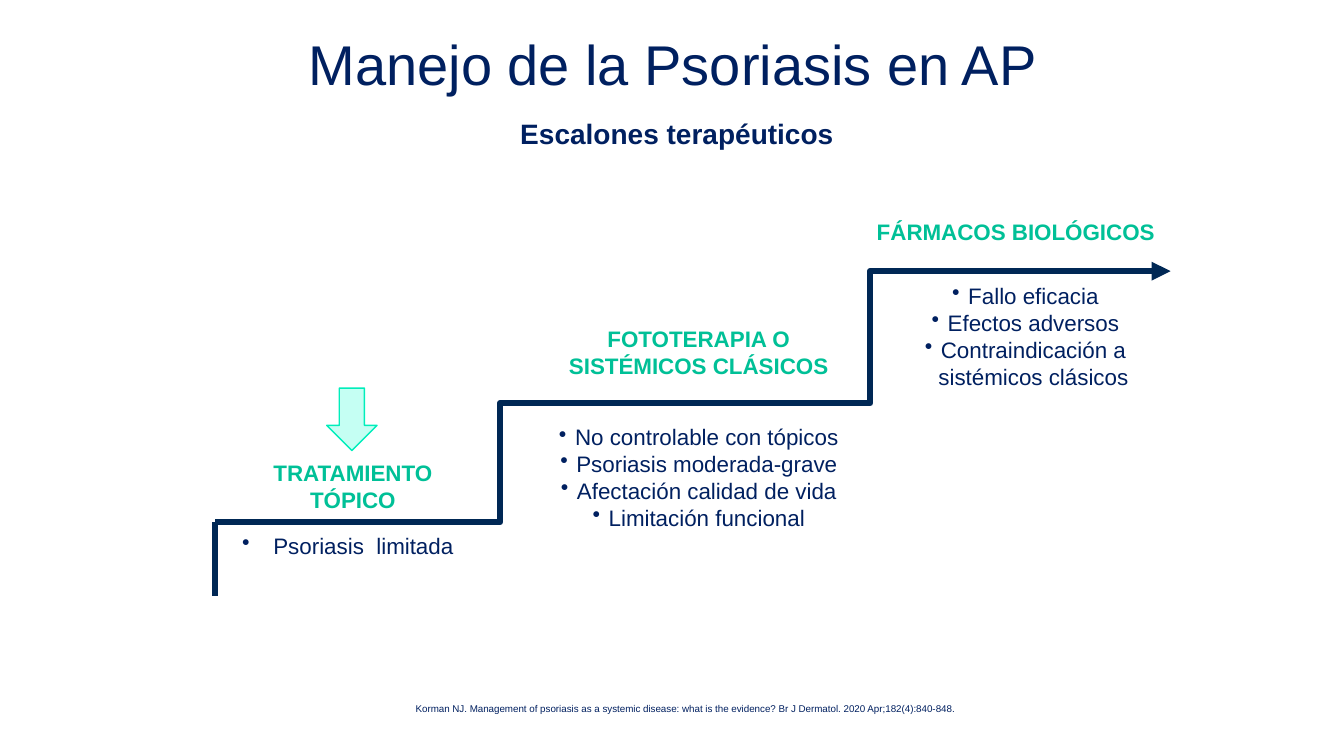
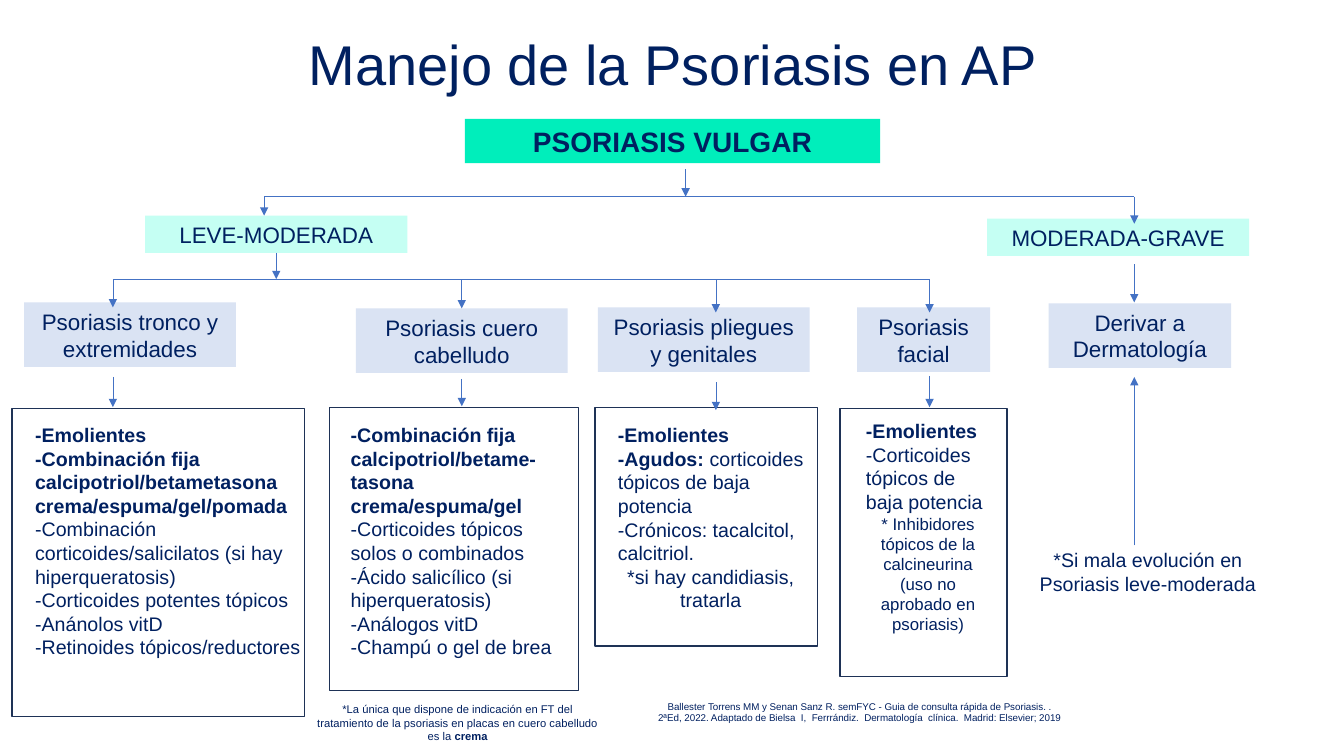
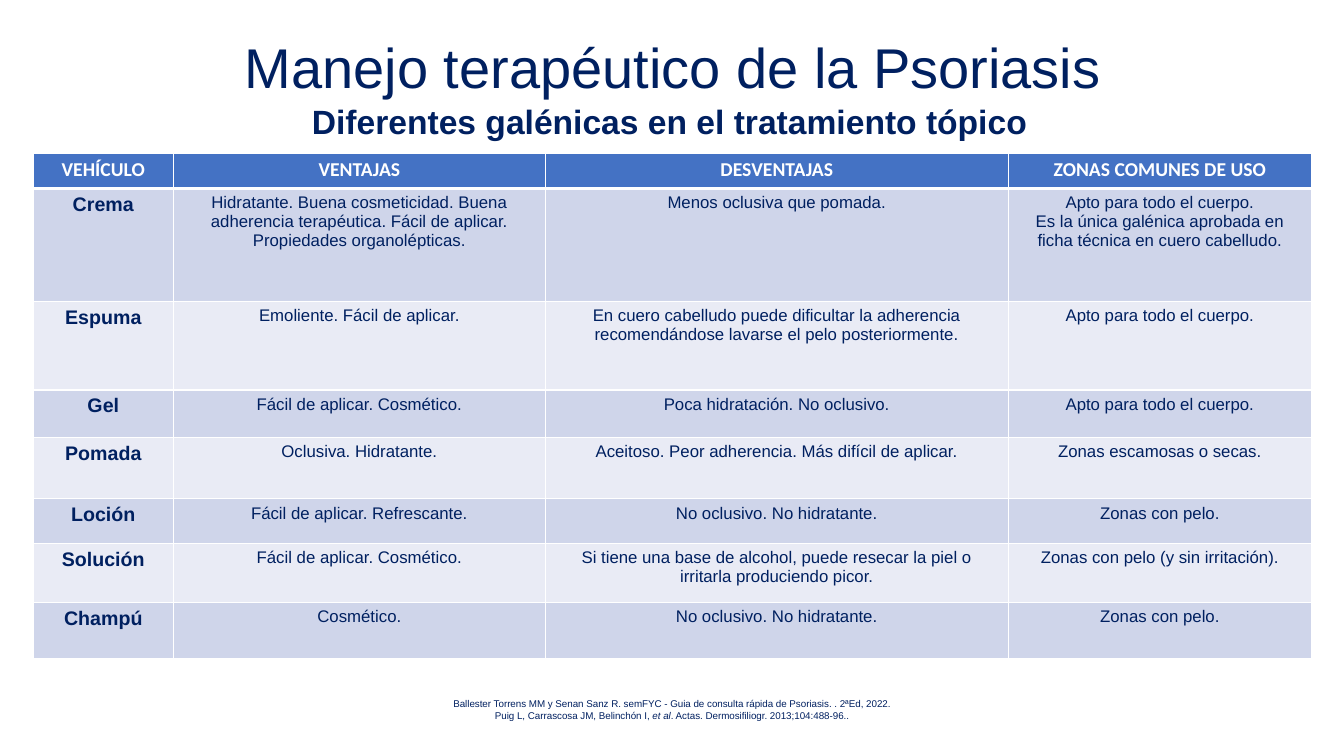
import lxml.etree
import pptx
import pptx.dml.color
import pptx.enum.shapes
import pptx.enum.text
import pptx.oxml.ns
import pptx.util

Inches = pptx.util.Inches
Pt = pptx.util.Pt
RGBColor = pptx.dml.color.RGBColor
SHAPE = pptx.enum.shapes.MSO_SHAPE
CONNECTOR = pptx.enum.shapes.MSO_CONNECTOR
ALIGN = pptx.enum.text.PP_ALIGN
ANCHOR = pptx.enum.text.MSO_ANCHOR
qn = pptx.oxml.ns.qn

NAVY = RGBColor(0x00, 0x20, 0x60)
STEP_BLUE = RGBColor(0x00, 0x28, 0x55)
PANEL_BLUE = RGBColor(0x1E, 0x32, 0x56)
BLUE = RGBColor(0x44, 0x72, 0xC4)
PALE_BLUE = RGBColor(0xDA, 0xE3, 0xF3)
GREEN = RGBColor(0x00, 0xC0, 0x97)
MINT = RGBColor(0x00, 0xEE, 0xBB)
PALE_MINT = RGBColor(0xC5, 0xFF, 0xF3)
WHITE = RGBColor(0xFF, 0xFF, 0xFF)
BANDS = (RGBColor(0xE9, 0xEB, 0xF5), RGBColor(0xCF, 0xD5, 0xEA))
FONT = "Arial"
PADDING = (0.1, 0.05)
NO_PADDING = (0, 0)


class Deck:
    def __init__(self):
        self.prs = pptx.Presentation()
        self.prs.slide_width = Inches(13.33)
        self.prs.slide_height = Inches(7.5)
        self.s = None

    def new_slide(self, title, top=0.37):
        self.s = self.prs.slides.add_slide(self.prs.slide_layouts[6])
        self.text((0.71, top, 11.92, 0.62), [title], 40, padding=NO_PADDING, spacing=0.9)

    def fill_frame(self, tf, paragraphs, size, color=NAVY, bold=False, align=ALIGN.CENTER,
                   font=FONT, spacing=None):
        """Each paragraph is a string or a list of (text, "b", "i" or "") runs."""
        for i, runs in enumerate(paragraphs):
            p = tf.paragraphs[0] if i == 0 else tf.add_paragraph()
            p.alignment = align
            if spacing:
                p.line_spacing = spacing
            for text, style in [(runs, "")] if isinstance(runs, str) else runs:
                r = p.add_run()
                r.text = text
                r.font.name = font
                r.font.size = Pt(size)
                r.font.bold = bold or style == "b"
                r.font.italic = style == "i"
                r.font.color.rgb = color

    def text(self, box, paragraphs, size, padding=PADDING, anchor=ANCHOR.TOP, **style):
        tf = self.s.shapes.add_textbox(*map(Inches, box)).text_frame
        tf.word_wrap = True
        tf.vertical_anchor = anchor
        tf.margin_left = tf.margin_right = Inches(padding[0])
        tf.margin_top = tf.margin_bottom = Inches(padding[1])
        self.fill_frame(tf, paragraphs, size, **style)
        return tf

    def bullets(self, box, items, indent=0.16):
        tf = self.text(box, items, 16, padding=NO_PADDING)
        for p in tf.paragraphs:
            pPr = p._p.get_or_add_pPr()
            pPr.set("marL", str(Inches(indent)))
            pPr.set("indent", str(-Inches(indent)))
            lxml.etree.SubElement(pPr, qn("a:buChar")).set("char", "•")

    def subtitle(self, box, text, size, align):
        self.text(box, [text], size, padding=NO_PADDING, bold=True, align=align, spacing=0.89)

    def citation(self, box, paragraphs):
        self.text(box, paragraphs, 7, padding=NO_PADDING, anchor=ANCHOR.MIDDLE)

    def shape(self, box, fill=None, line=None, kind=SHAPE.RECTANGLE):
        sp = self.s.shapes.add_shape(kind, *map(Inches, box))
        sp.shadow.inherit = False
        if fill is None:
            sp.fill.background()
        else:
            sp.fill.solid()
            sp.fill.fore_color.rgb = fill
        if line is None:
            sp.line.fill.background()
        else:
            sp.line.color.rgb = line
            sp.line.width = Pt(1)
        return sp

    def label(self, box, text, fill, size=16, bold=False):
        sp = self.shape(box, fill)
        sp.text_frame.vertical_anchor = ANCHOR.MIDDLE
        self.fill_frame(sp.text_frame, [text], size, bold=bold)
        return sp

    def line(self, start, end, color=BLUE, width=0.5, arrow=True, kind=CONNECTOR.STRAIGHT):
        c = self.s.shapes.add_connector(kind, *map(Inches, (*start, *end)))
        c.line.color.rgb = color
        c.line.width = Pt(width)
        spPr = c._element.spPr
        if arrow:
            lxml.etree.SubElement(spPr.find(qn("a:ln")), qn("a:tailEnd")).set("type", "triangle")
        lxml.etree.SubElement(spPr, qn("a:effectLst"))
        return c

    def cell_borders(self, cell, bottom):
        tcPr = cell._tc.get_or_add_tcPr()
        for side, width in (("L", 1), ("R", 1), ("T", 1), ("B", bottom)):
            ln = lxml.etree.SubElement(tcPr, qn("a:ln" + side))
            ln.set("w", str(Pt(width)))
            solid = lxml.etree.SubElement(ln, qn("a:solidFill"))
            lxml.etree.SubElement(solid, qn("a:srgbClr")).set("val", str(WHITE))

    def table(self, box, widths, heights, rows):
        table = self.s.shapes.add_table(len(rows), len(widths), *map(Inches, box)).table
        for column, width in zip(table.columns, widths):
            column.width = Inches(width)
        for i, (height, row) in enumerate(zip(heights, rows)):
            table.rows[i].height = Inches(height)
            for j, text in enumerate(row):
                cell = table.cell(i, j)
                self.cell_borders(cell, bottom=3 if i == 0 else 1)
                cell.fill.solid()
                cell.fill.fore_color.rgb = BLUE if i == 0 else BANDS[i % 2]
                if i == 0:
                    style = dict(size=14, color=WHITE, bold=True, font="Calibri")
                elif j == 0:
                    style = dict(size=14, bold=True)
                else:
                    style = dict(size=12)
                self.fill_frame(cell.text_frame, text.split("\n"), **style)


def steps_slide(d):
    d.new_slide("Manejo de la Psoriasis en AP")
    d.subtitle((5.16, 1.2, 4.62, 0.81), "Escalones terapéuticos", 20, ALIGN.LEFT)
    stair = dict(color=STEP_BLUE, width=4.5)
    d.line((5.65, 4), (11.61, 2.69), kind=CONNECTOR.ELBOW, **stair)
    d.line((7.79, 4), (2.13, 5.18), kind=CONNECTOR.ELBOW, arrow=False, **stair)
    d.line((2.13, 5.18), (2.13, 5.91), arrow=False, **stair)

    d.bullets((2.27, 5.28, 2.36, 0.27), ["Psoriasis  limitada"], indent=0.31)
    d.bullets((5.39, 4.2, 3.08, 1.08), [
        "No controlable con tópicos", "Psoriasis moderada-grave",
        "Afectación calidad de vida", "Limitación funcional"])
    d.bullets((8.63, 2.8, 3.08, 1.08), [
        "Fallo eficacia", "Efectos adversos", "Contraindicación a sistémicos clásicos"])
    for box, heading in (
            ((2.27, 4.56, 2.46, 0.54), "TRATAMIENTO TÓPICO"),
            ((5.39, 3.23, 3.08, 0.54), "FOTOTERAPIA O SISTÉMICOS CLÁSICOS"),
            ((8.63, 2.16, 2.89, 0.27), "FÁRMACOS BIOLÓGICOS")):
        d.text(box, [heading], 16, padding=NO_PADDING, color=GREEN, bold=True)
    d.shape((3.24, 3.85, 0.5, 0.62), PALE_MINT, MINT, SHAPE.DOWN_ARROW)
    d.text((2.57, 6.92, 8.45, 0.22), [
        "Korman NJ. Management of psoriasis as a systemic disease: what is the evidence? "
        "Br J Dermatol. 2020 Apr;182(4):840-848."], 7)


def algorithm_slide(d):
    d.new_slide("Manejo de la Psoriasis en AP")
    d.label((4.61, 1.18, 4.12, 0.44), "PSORIASIS VULGAR", MINT, 20, bold=True)
    mild = d.label((1.44, 2.14, 2.6, 0.37), "LEVE-MODERADA", PALE_MINT)
    d.label((9.79, 2.17, 2.6, 0.37), "MODERADA-GRAVE", PALE_MINT)
    d.label((10.4, 3.01, 1.81, 0.64), "Derivar a Dermatología", PALE_BLUE)

    severity_y, site_y = 1.95, 2.77
    d.line((2.62, severity_y), (11.25, severity_y), arrow=False)
    d.line((6.8, 1.68), (6.8, severity_y))
    d.line((2.62, severity_y), (2.62, 2.14))
    d.line((11.25, severity_y), (11.25, 2.22))
    d.line((11.25, 2.62), (11.25, 3))
    d.line((11.25, 5.41), (11.25, 3.74))
    d.line((1.12, site_y), (9.22, site_y), arrow=False)
    d.line((2.74, 2.51), (2.74, site_y)).begin_connect(mild, 2)

    # site, label box, panel box, text box, arrow x, arrow ends, treatments
    sites = (
        ("Psoriasis tronco y extremidades", (0.24, 3, 2.1, 0.64), (0.12, 4.05, 2.9, 3.06),
         (0.25, 4.15, 2.84, 2.46), 1.12, (3.05, 3.74, 4.04),
         [[("-Emolientes", "b")],
          [("-Combinación fija calcipotriol/betametasona crema/espuma/gel/pomada", "b")],
          "-Combinación corticoides/salicilatos (si hay hiperqueratosis)",
          "-Corticoides potentes tópicos", "-Anánolos vitD",
          "-Retinoides tópicos/reductores"]),
        ("Psoriasis cuero cabelludo", (3.53, 3.06, 2.1, 0.64), (3.27, 4.04, 2.47, 2.81),
         (3.38, 4.15, 2.33, 2.46), 4.58, (3.06, 3.76, 4.03),
         [[("-Combinación fija calcipotriol/betame-tasona crema/espuma/gel", "b")],
          "-Corticoides tópicos solos o combinados", "-Ácido salicílico (si hiperqueratosis)",
          "-Análogos vitD", "-Champú o gel de brea"]),
        ("Psoriasis pliegues y genitales", (5.93, 3.05, 2.1, 0.64), (5.9, 4.04, 2.21, 2.37),
         (6.03, 4.15, 2.04, 1.99), 7.1, (3.1, 3.79, 4.07),
         [[("-Emolientes", "b")],
          [("-Agudos: ", "b"), ("corticoides tópicos de baja potencia", "")],
          "-Crónicos: tacalcitol, calcitriol.", "*si hay candidiasis, tratarla"]),
        ("Psoriasis facial", (8.5, 3.05, 1.32, 0.64), (8.33, 4.05, 1.66, 2.66),
         (8.49, 4.11, 1.43, 2.26), 9.22, (3.1, 3.73, 4.04),
         [[("-Emolientes", "b")], "-Corticoides tópicos de baja potencia",
          "* Inhibidores tópicos de la calcineurina (uso no aprobado en psoriasis)"]),
    )
    for site, label_box, panel_box, text_box, x, (label_y, start_y, panel_y), treatments in sites:
        label = d.label(label_box, site, PALE_BLUE)
        d.shape(panel_box, line=PANEL_BLUE)
        tf = d.text(text_box, treatments, 14, align=ALIGN.LEFT)
        remark = tf.paragraphs[-1]
        if remark.text.startswith("*"):
            remark.alignment = ALIGN.CENTER
        if site == "Psoriasis facial":
            remark.runs[0].font.size = Pt(12)
        branch = d.line((x, site_y), (x, label_y))
        if site == "Psoriasis cuero cabelludo":
            branch.end_connect(label, 0)
        d.line((x, start_y), (x, panel_y))

    d.text((10.19, 5.39, 2.39, 0.57), ["*Si mala evolución en Psoriasis leve-moderada"], 14)
    d.text((3.01, 6.92, 3.06, 0.5), [[
        ("*La única que dispone de indicación en FT del tratamiento de la psoriasis "
         "en placas en cuero cabelludo es la ", ""), ("crema", "b")]], 8)
    d.citation((6.51, 6.88, 4.03, 0.37), [
        "Ballester Torrens MM y Senan Sanz R. semFYC - Guia de consulta rápida de Psoriasis. . "
        "2ªEd, 2022. Adaptado de Bielsa  I,  Ferrrándiz.  Dermatología  clínica.  "
        "Madrid: Elsevier; 2019"])


def vehicles_slide(d):
    d.new_slide("Manejo terapéutico de la Psoriasis", top=0.4)
    d.subtitle((1.84, 1.05, 9.6, 0.81), "Diferentes galénicas en el tratamiento tópico", 24,
               ALIGN.CENTER)
    d.table(
        (0.33, 1.52, 12.67, 5.03), (1.39, 3.69, 4.59, 3.01),
        (0.35, 1.12, 0.88, 0.47, 0.61, 0.44, 0.59, 0.55),
        (("VEHÍCULO", "VENTAJAS", "DESVENTAJAS", "ZONAS COMUNES DE USO"),
         ("Crema",
          "Hidratante. Buena cosmeticidad. Buena adherencia terapéutica. Fácil de aplicar. "
          "Propiedades organolépticas.",
          "Menos oclusiva que pomada.",
          "Apto para todo el cuerpo.\n"
          "Es la única galénica aprobada en ficha técnica en cuero cabelludo."),
         ("Espuma", "Emoliente. Fácil de aplicar.",
          "En cuero cabelludo puede dificultar la adherencia recomendándose lavarse el pelo "
          "posteriormente.",
          "Apto para todo el cuerpo."),
         ("Gel", "Fácil de aplicar. Cosmético.", "Poca hidratación. No oclusivo.",
          "Apto para todo el cuerpo."),
         ("Pomada", "Oclusiva. Hidratante.", "Aceitoso. Peor adherencia. Más difícil de aplicar.",
          "Zonas escamosas o secas."),
         ("Loción", "Fácil de aplicar. Refrescante.", "No oclusivo. No hidratante.",
          "Zonas con pelo."),
         ("Solución", "Fácil de aplicar. Cosmético.",
          "Si tiene una base de alcohol, puede resecar la piel o irritarla produciendo picor.",
          "Zonas con pelo (y sin irritación)."),
         ("Champú", "Cosmético.", "No oclusivo. No hidratante.", "Zonas con pelo.")))
    d.citation((1.25, 6.82, 10.83, 0.44), [
        "Ballester Torrens MM y Senan Sanz R. semFYC - Guia de consulta rápida de Psoriasis. . "
        "2ªEd, 2022.",
        [("Puig L, Carrascosa JM, Belinchón I, ", ""), ("et al", "i"),
         (". Actas. Dermosifiliogr. 2013;104:488-96..", "")]])


def main():
    d = Deck()
    steps_slide(d)
    algorithm_slide(d)
    vehicles_slide(d)
    d.prs.save("out.pptx")


if __name__ == "__main__":
    main()
